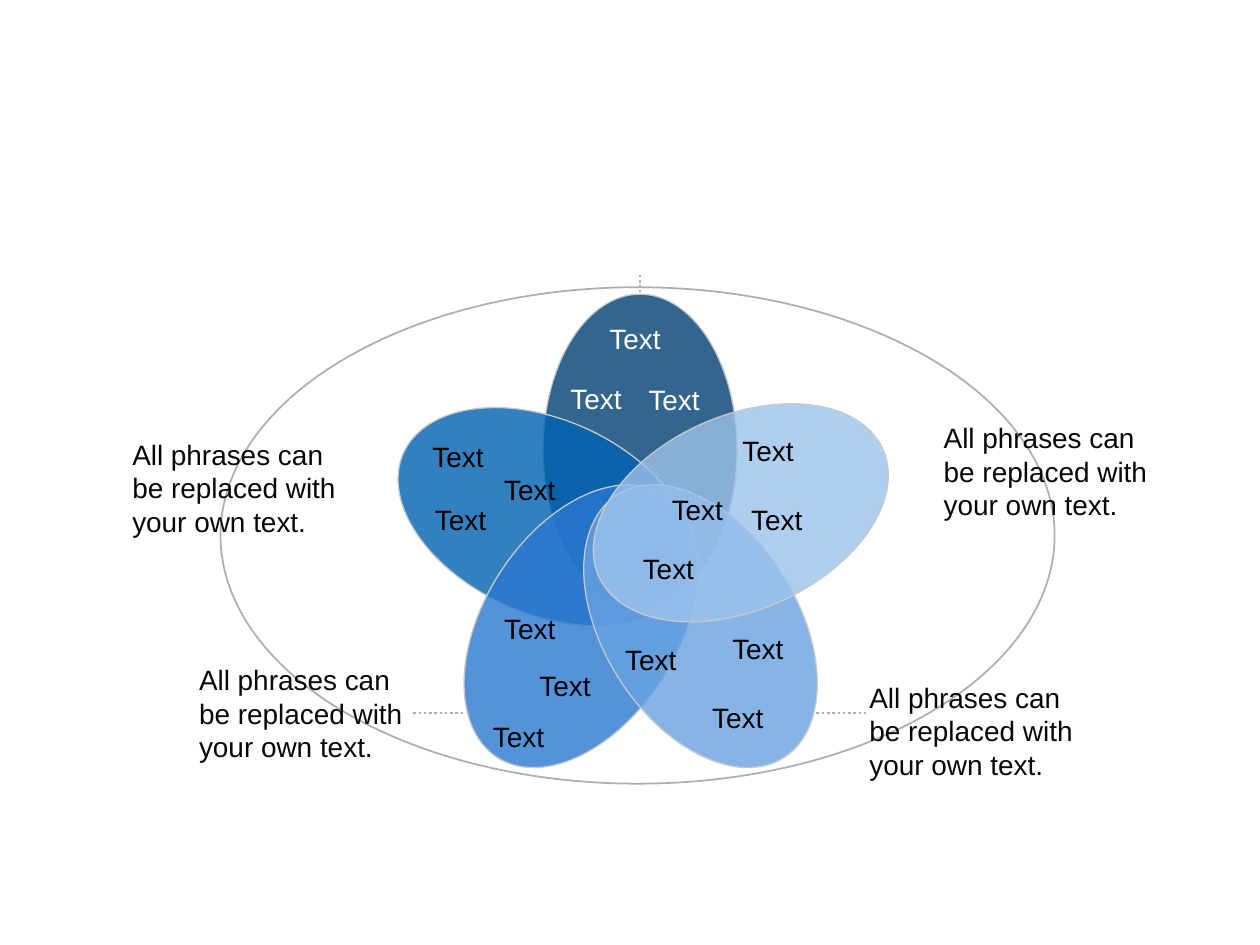
from dataclasses import dataclass

from lxml import etree
from pptx import Presentation
from pptx import util as u
from pptx.dml.color import RGBColor
from pptx.enum import dml, shapes, text
from pptx.oxml import ns


@dataclass(frozen=True)
class Theme:
    font: str = "Arial"
    size: float = 16
    outline: str = "AEAEAE"
    petal_line: str = "C9C9C9"
    note: str = "080808"
    light: str = "FFFFFF"
    dark: str = "000000"
    petal_alpha: int = 80


@dataclass(frozen=True)
class Box:
    left: float
    top: float
    width: float
    height: float

    def inside(self, left, top, width, height):
        """Box placed at an offset from this one's corner."""
        return Box(self.left + left, self.top + top, width, height)

    def lengths(self):
        return [u.Inches(n) for n in (self.left, self.top, self.width, self.height)]


THEME = Theme()
DIAGRAM = Box(1.75, 2.28, 6.62, 3.94)
NOTE = "All phrases can be replaced with your own text."
NOTE_SIZE = (1.77, 0.8)
PETAL_SIZE = (2.47, 1.54)
LABEL_HEIGHT = 0.27

# Offsets from the diagram's corner
NOTES = [(5.15, 3.12), (-0.7, 1.19), (-0.17, 2.98), (5.74, 1.06)]
LEADERS = [(1.53, 3.38, 1.94, 3.38), (3.33, -0.1, 3.33, 0.04),
           (4.73, 3.38, 5.13, 3.38)]

# Petals: centre, rotation, fill
PETALS = [
    (3.33, 1.29, 90, "004074"),
    (2.58, 1.82, 24.1, "0061B2"),
    (2.86, 2.69, 302.3, "2A79D0"),
    (3.81, 2.69, 57.7, "69A2E1"),
    (4.13, 1.79, 335.9, "9DC2EB"),
]

# Labels by petal: colour, box width, corners
LABELS = [
    (THEME.light, 1.02, [(2.78, 0.27), (3.09, 0.76), (2.47, 0.75)]),
    (THEME.dark, 0.45, [(1.68, 1.71), (1.66, 1.21), (2.23, 1.47)]),
    (THEME.dark, 0.45, [(2.23, 2.57), (2.51, 3.03), (2.14, 3.43)]),
    (THEME.dark, 0.45, [(3.88, 3.28), (4.04, 2.73), (3.19, 2.82)]),
    (THEME.dark, 0.45, [(4.12, 1.16), (4.19, 1.71), (3.56, 1.63), (3.33, 2.1)]),
]


def add_words(page, box, words, color, align=text.PP_ALIGN.LEFT):
    frame = page.shapes.add_textbox(*box.lengths()).text_frame
    frame.word_wrap = True
    frame.auto_size = text.MSO_AUTO_SIZE.SHAPE_TO_FIT_TEXT
    frame.margin_left = frame.margin_right = 0
    frame.margin_top = frame.margin_bottom = 0
    para = frame.paragraphs[0]
    para.text = words
    para.alignment = align
    para.font.name = THEME.font
    para.font.size = u.Pt(THEME.size)
    para.font.color.rgb = RGBColor.from_string(color)


def add_ellipse(page, box, line, weight, fill=None, rotation=0):
    oval = page.shapes.add_shape(shapes.MSO_SHAPE.OVAL, *box.lengths())
    oval.shadow.inherit = False
    oval.rotation = rotation
    oval.line.color.rgb = RGBColor.from_string(line)
    oval.line.width = u.Pt(weight)
    if fill is None:
        oval.fill.background()
        return
    oval.fill.solid()
    oval.fill.fore_color.rgb = RGBColor.from_string(fill)
    color = oval.fill._xPr.find(".//" + ns.qn("a:srgbClr"))
    alpha = etree.SubElement(color, ns.qn("a:alpha"))
    alpha.set("val", str(THEME.petal_alpha * 1000))


def add_leader(page, box, start_x, start_y, end_x, end_y):
    leader = page.shapes.add_connector(
        shapes.MSO_CONNECTOR.STRAIGHT,
        u.Inches(box.left + start_x), u.Inches(box.top + start_y),
        u.Inches(box.left + end_x), u.Inches(box.top + end_y))
    leader.line.color.rgb = RGBColor.from_string(THEME.outline)
    leader.line.width = u.Pt(1.5)
    leader.line.dash_style = dml.MSO_LINE.ROUND_DOT
    etree.SubElement(leader._element.spPr, ns.qn("a:effectLst"))


def add_surround(page, box):
    """Outer ring with its notes and dotted leaders."""
    add_ellipse(page, box, THEME.outline, 1)
    for left, top in NOTES:
        add_words(page, box.inside(left, top, *NOTE_SIZE), NOTE, THEME.note)
    for ends in LEADERS:
        add_leader(page, box, *ends)


def add_flower(page, box):
    """Five overlapping petals and their labels."""
    width, height = PETAL_SIZE
    for x, y, rotation, fill in PETALS:
        petal = box.inside(x - width / 2, y - height / 2, width, height)
        add_ellipse(page, petal, THEME.petal_line, 0.75, fill, rotation)
    for color, label_width, corners in LABELS:
        for left, top in corners:
            label = box.inside(left, top, label_width, LABEL_HEIGHT)
            add_words(page, label, "Text", color, text.PP_ALIGN.CENTER)


def main():
    deck = Presentation()
    deck.slide_width, deck.slide_height = u.Inches(10), u.Inches(7.5)
    page = deck.slides.add_slide(deck.slide_layouts[6])
    add_surround(page, DIAGRAM)
    add_flower(page, DIAGRAM)
    deck.save("out.pptx")


if __name__ == "__main__":
    main()
